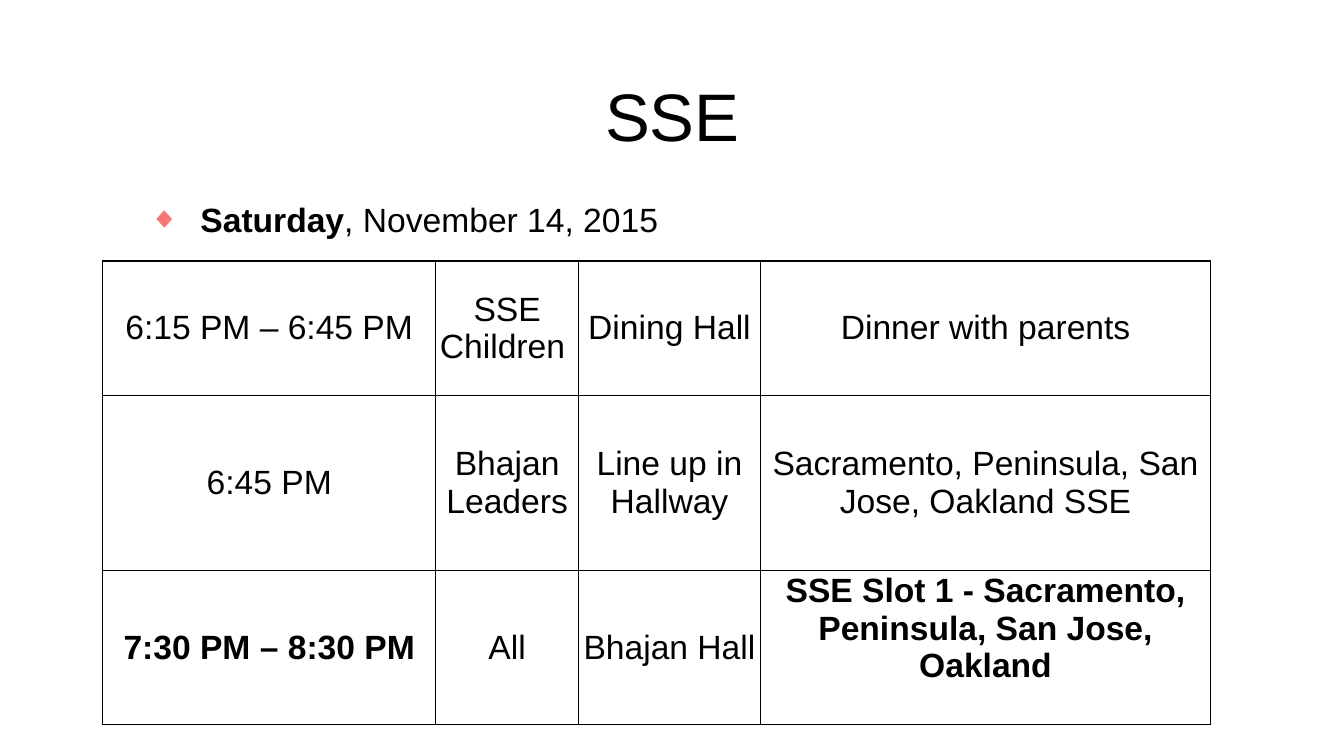
from lxml import etree
from pptx import Presentation
from pptx import util as u
from pptx.dml.color import RGBColor
from pptx.enum import text
from pptx.oxml import ns

COLORS = {"ink": "000000", "bullet": "F77574"}
SCHEDULE = [
    ["6:15 PM – 6:45 PM", "SSE Children ", "Dining Hall", "Dinner with parents"],
    ["6:45 PM", "Bhajan Leaders", "Line up in Hallway",
     "Sacramento, Peninsula, San Jose, Oakland SSE"],
    ["7:30 PM – 8:30 PM", "All", "Bhajan Hall",
     "SSE Slot 1 - Sacramento, Peninsula, San Jose, Oakland"],
]
BOLD_CELLS = {(2, 0), (2, 3)}
TOP_CELLS = {(2, 3)}
COLUMN_WIDTHS = [3.3, 1.42, 1.8, 4.47]
ROW_HEIGHTS = [1.33, 1.74, 1.53]


def add_xml(parent, tag, **attributes):
    return etree.SubElement(parent, ns.qn(tag), attributes)


class SlideBuilder:
    font = "Arial"
    size = 24

    def __init__(self, slide):
        self.slide = slide

    def run(self, paragraph, words, size=None, bold=False):
        run = paragraph.add_run()
        run.text = words
        run.font.name = self.font
        run.font.size = u.Pt(size or self.size)
        run.font.bold = bold
        run.font.color.rgb = RGBColor.from_string(COLORS["ink"])

    def text_box(self, left, top, width, height, anchor):
        box = self.slide.shapes.add_textbox(*map(u.Inches, (left, top, width, height)))
        frame = box.text_frame
        frame.word_wrap = True
        frame.vertical_anchor = anchor
        return frame

    def title(self, words):
        frame = self.text_box(0.92, 0.41, 11.5, 1.45, text.MSO_ANCHOR.MIDDLE)
        heading = frame.paragraphs[0]
        heading.alignment = text.PP_ALIGN.CENTER
        self.run(heading, words, size=48)

    def bullet(self, runs):
        frame = self.text_box(1.38, 1.88, 10.66, 4.44, text.MSO_ANCHOR.TOP)
        frame.margin_top = u.Inches(0.09)
        day = frame.paragraphs[0]
        props = day._p.get_or_add_pPr()
        props.set("marL", str(u.Inches(0.51)))
        props.set("indent", str(u.Inches(-0.51)))
        add_xml(add_xml(props, "a:buClr"), "a:srgbClr", val=COLORS["bullet"])
        add_xml(props, "a:buSzPct", val="90000")
        add_xml(props, "a:buFont", typeface=self.font)
        add_xml(props, "a:buChar", char="◆")
        for words, bold in runs:
            self.run(day, words, bold=bold)

    def borders(self, cell):
        props = cell._tc.get_or_add_tcPr()
        for index, side in enumerate("LRTB"):
            line = add_xml(props, f"a:ln{side}", w=str(u.Pt(1)))
            add_xml(add_xml(line, "a:solidFill"), "a:srgbClr", val=COLORS["ink"])
            props.insert(index, line)

    def table(self, left, top, rows):
        grid = self.slide.shapes.add_table(
            len(rows), len(COLUMN_WIDTHS), u.Inches(left), u.Inches(top),
            u.Inches(sum(COLUMN_WIDTHS)), u.Inches(sum(ROW_HEIGHTS))).table
        grid.first_row = grid.horz_banding = False
        for column, width in zip(grid.columns, COLUMN_WIDTHS):
            column.width = u.Inches(width)
        for row, height in zip(grid.rows, ROW_HEIGHTS):
            row.height = u.Inches(height)
        for r, entries in enumerate(rows):
            for c, words in enumerate(entries):
                self.cell(grid.cell(r, c), words, (r, c) in BOLD_CELLS, (r, c) in TOP_CELLS)

    def cell(self, cell, words, bold, at_top):
        cell.fill.background()
        self.borders(cell)
        cell.margin_left = cell.margin_right = u.Inches(0.02)
        cell.margin_top = cell.margin_bottom = u.Inches(0.02)
        cell.vertical_anchor = text.MSO_ANCHOR.TOP if at_top else text.MSO_ANCHOR.MIDDLE
        entry = cell.text_frame.paragraphs[0]
        entry.alignment = text.PP_ALIGN.CENTER
        self.run(entry, words, bold=bold)


def main():
    deck = Presentation()
    deck.slide_width, deck.slide_height = u.Inches(13.33), u.Inches(7.5)
    builder = SlideBuilder(deck.slides.add_slide(deck.slide_layouts[6]))

    # Heading and date
    builder.title("SSE")
    builder.bullet([("Saturday", True), (", November 14, 2015", False)])

    # Evening schedule
    builder.table(1.02, 2.59, SCHEDULE)

    deck.save("out.pptx")


if __name__ == "__main__":
    main()
